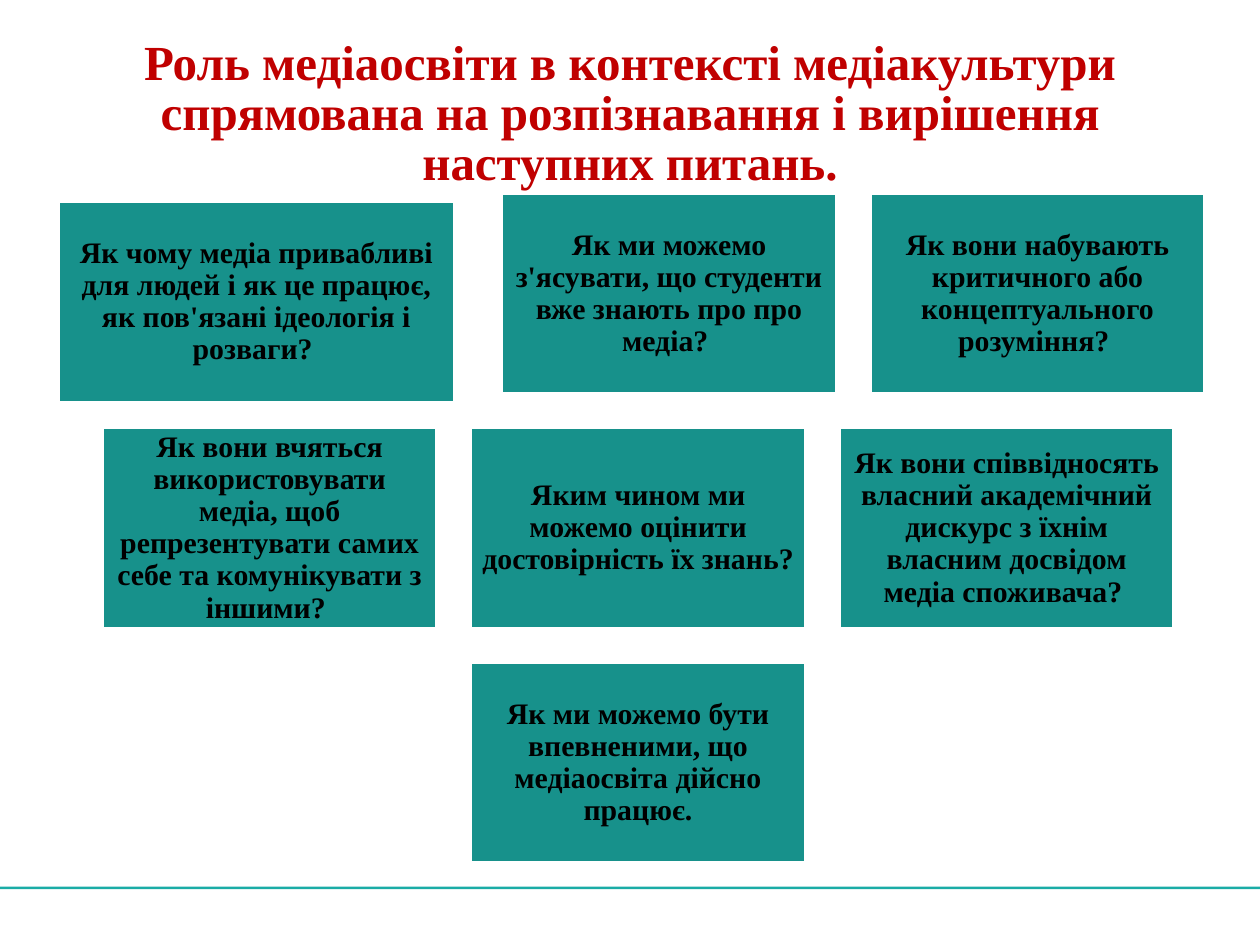
"""Build a slide of seven questions about the role of media education."""
from dataclasses import dataclass

from pptx import Presentation
from pptx.dml.color import RGBColor
from pptx.enum import shapes, text
from pptx.util import Pt

TITLE = ("Роль медіаосвіти в контексті медіакультури спрямована на "
         "розпізнавання і вирішення наступних питань.")
WIDE_QUESTION = ("Як чому медіа привабливі для людей і як це працює, "
                 "як пов'язані ідеологія і розваги? ")
QUESTION_ROWS = [
    (286.6, ["Як ми можемо з'ясувати, що студенти вже знають про про медіа? ",
             "Як вони набувають критичного або концептуального розуміння? "]),
    (58.4, ["Як вони вчяться використовувати медіа, щоб репрезентувати самих "
            "себе та комунікувати з іншими? ",
            "Яким чином ми можемо оцінити достовірність їх знань? ",
            "Як вони співвідносять власний академічний дискурс з їхнім "
            "власним досвідом медіа споживача? "]),
    (268.9, ["Як ми можемо бути впевненими, що медіаосвіта дійсно працює."]),
]

SLIDE_WIDTH, SLIDE_HEIGHT = 720, 540
CARD_WIDTH, CARD_HEIGHT = 191.4, 115
COLUMN_STEP, ROW_STEP = 210.6, 134
FIRST_ROW_TOP = 110.3
WIDE_CARD = (33.1, 115, 226.8, CARD_HEIGHT)
TITLE_BOX = (24.5, 46.8, 671, 65.5)
FOOTER_RULE = (0, 506.6, SLIDE_WIDTH, 1.5)


@dataclass(frozen=True)
class Theme:
    font: str = "Times New Roman"
    title_size: float = 28
    card_size: float = 17
    title: RGBColor = RGBColor(0xC0, 0x00, 0x00)
    ink: RGBColor = RGBColor(0x00, 0x00, 0x00)
    card: RGBColor = RGBColor(0x17, 0x91, 0x8B)
    border: RGBColor = RGBColor(0xFF, 0xFF, 0xFF)
    rule: RGBColor = RGBColor(0x1A, 0xAC, 0xA6)


THEME = Theme()


def write(shape, words, size, color, spacing, anchor, margins):
    frame = shape.text_frame
    frame.word_wrap = True
    frame.auto_size = text.MSO_AUTO_SIZE.NONE
    frame.vertical_anchor = anchor
    frame.margin_left = frame.margin_right = Pt(margins[0])
    frame.margin_top = frame.margin_bottom = Pt(margins[1])
    paragraph = frame.paragraphs[0]
    paragraph.alignment = text.PP_ALIGN.CENTER
    paragraph.line_spacing = spacing
    run = paragraph.add_run()
    run.text = words
    run.font.name = THEME.font
    run.font.size = Pt(size)
    run.font.bold = True
    run.font.color.rgb = color
    return paragraph


def add_rectangle(slide, box, fill):
    shape = slide.shapes.add_shape(shapes.MSO_SHAPE.RECTANGLE, *map(Pt, box))
    shape.shadow.inherit = False
    shape.fill.solid()
    shape.fill.fore_color.rgb = fill
    shape.line.fill.background()
    return shape


def add_card(slide, box, question):
    card = add_rectangle(slide, box, THEME.card)
    card.line.color.rgb = THEME.border
    card.line.width = Pt(2)
    paragraph = write(card, question, THEME.card_size, THEME.ink, 0.9,
                      text.MSO_ANCHOR.MIDDLE, (5.1, 5.1))
    paragraph.space_after = Pt(7)


def main():
    presentation = Presentation()
    presentation.slide_width = Pt(SLIDE_WIDTH)
    presentation.slide_height = Pt(SLIDE_HEIGHT)
    slide = presentation.slides.add_slide(presentation.slide_layouts[6])

    add_rectangle(slide, FOOTER_RULE, THEME.rule)
    title = slide.shapes.add_textbox(*map(Pt, TITLE_BOX))
    write(title, TITLE, THEME.title_size, THEME.title, 0.85,
          text.MSO_ANCHOR.BOTTOM, (7.2, 3.6))

    add_card(slide, WIDE_CARD, WIDE_QUESTION)
    for row, (left, questions) in enumerate(QUESTION_ROWS):
        top = FIRST_ROW_TOP + row * ROW_STEP
        for column, question in enumerate(questions):
            box = (left + column * COLUMN_STEP, top, CARD_WIDTH, CARD_HEIGHT)
            add_card(slide, box, question)

    presentation.save("out.pptx")


if __name__ == "__main__":
    main()
